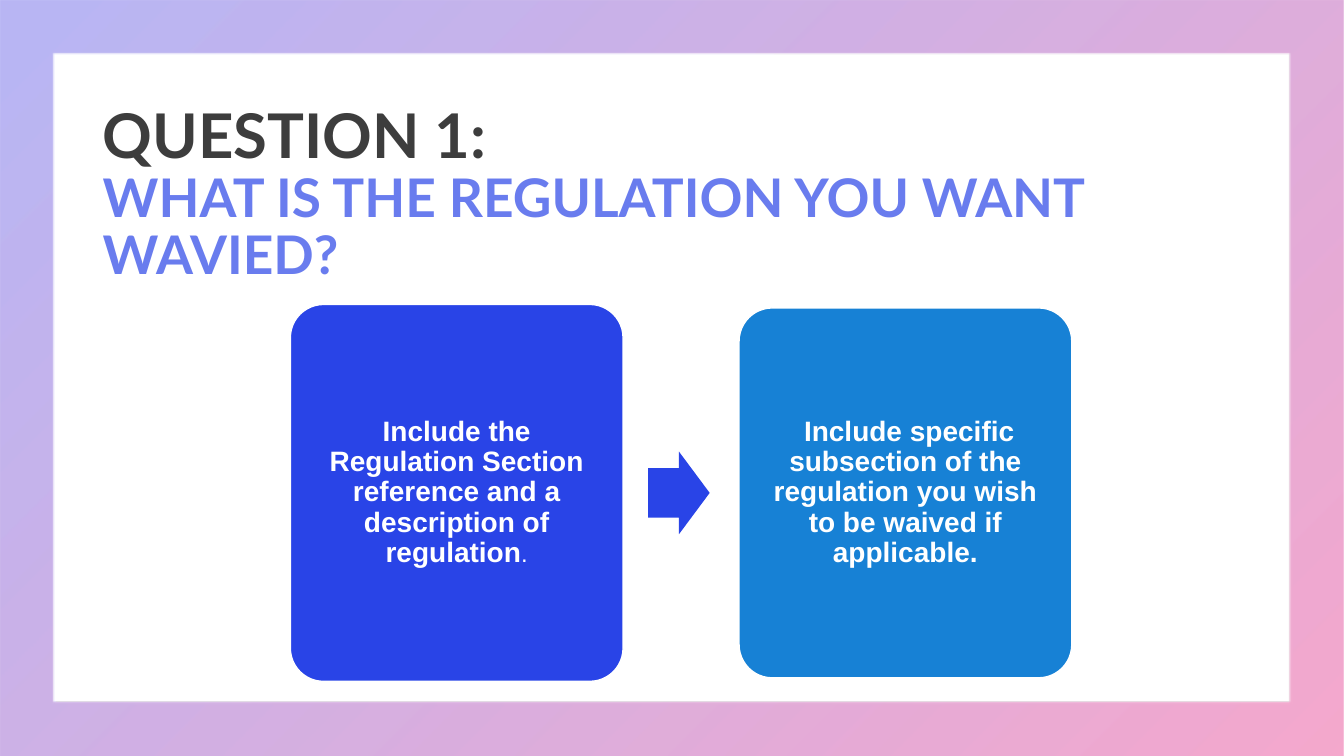
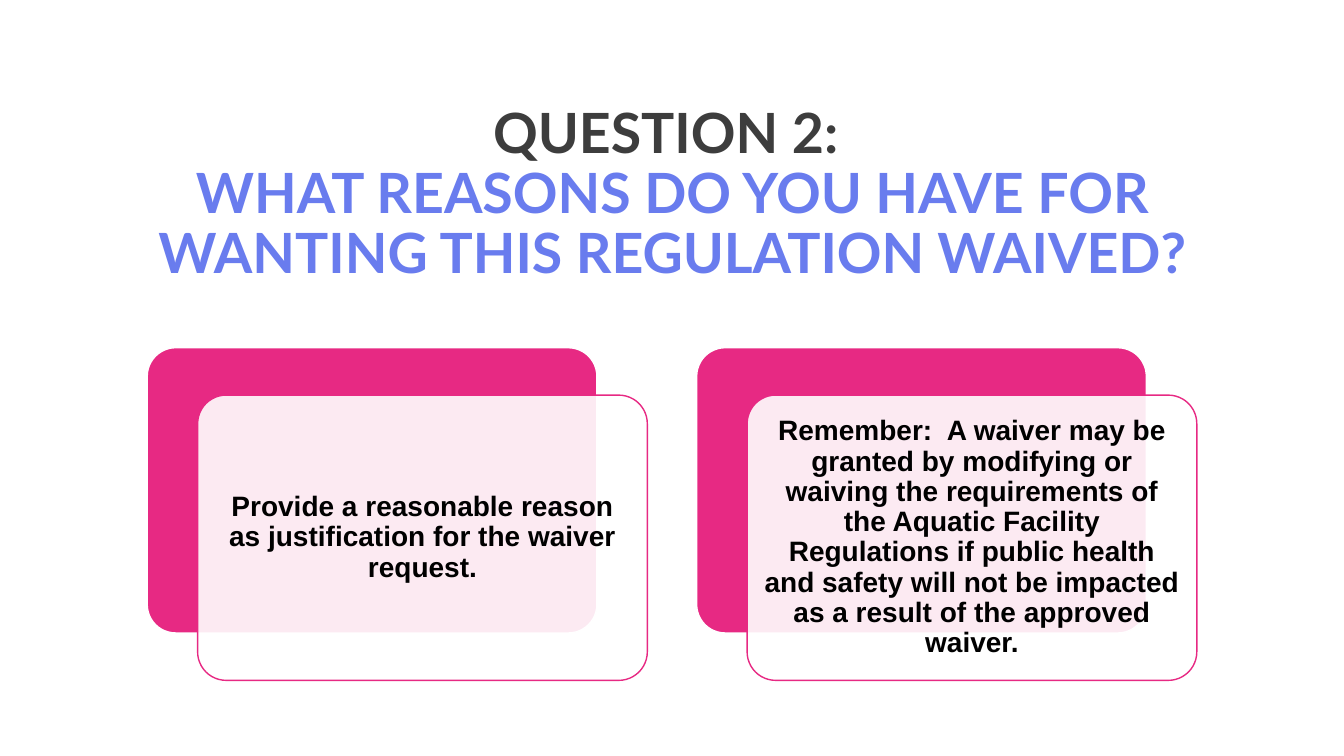
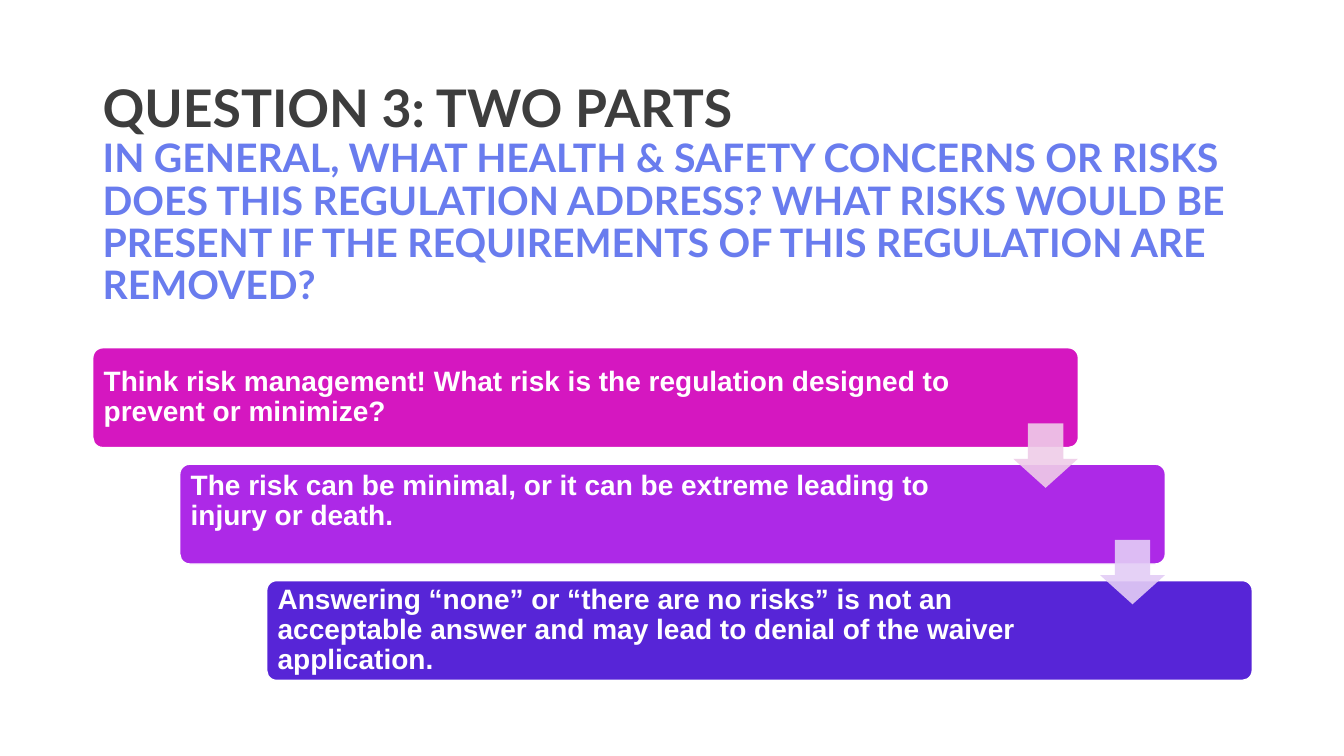
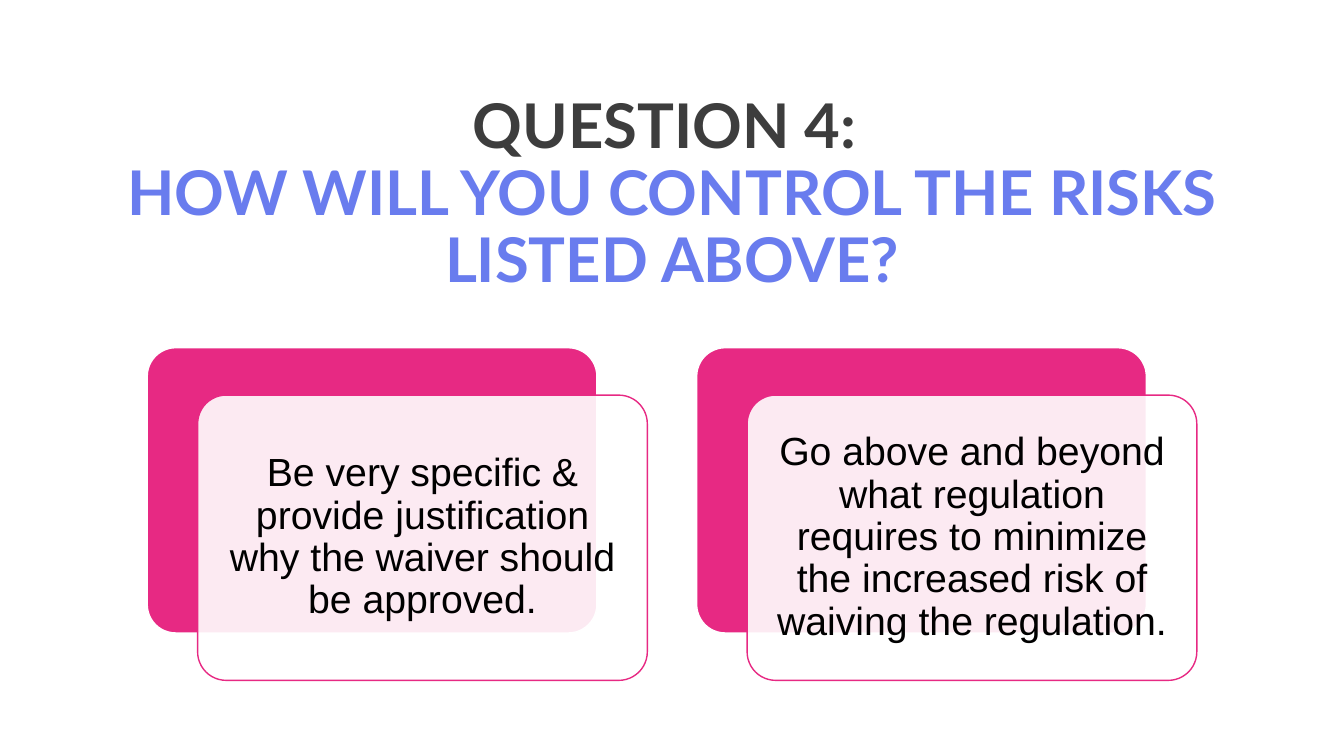
from lxml import etree
from pptx import Presentation
from pptx import util as u
from pptx.dml.color import RGBColor
from pptx.enum import shapes, text
from pptx.oxml.ns import qn

WHITE = RGBColor(0xFF, 0xFF, 0xFF)
BLACK = RGBColor(0x00, 0x00, 0x00)
CHARCOAL = RGBColor(0x3D, 0x3D, 0x3D)
PERIWINKLE = RGBColor(0x69, 0x7C, 0xEE)
INDIGO = RGBColor(0x50, 0x4C, 0xE5)
BLUE = RGBColor(0x29, 0x44, 0xE7)
SKY = RGBColor(0x17, 0x81, 0xD5)
PINK = RGBColor(0xE7, 0x29, 0x83)
MAGENTA = RGBColor(0xD5, 0x17, 0xC0)
PURPLE = RGBColor(0xAD, 0x29, 0xE7)
VIOLET = RGBColor(0x57, 0x25, 0xD7)
PALE_PINK = RGBColor(0xEF, 0xCC, 0xE8)
PALE_VIOLET = RGBColor(0xE3, 0xCD, 0xF6)

TITLE_FONT, BODY_FONT = "Lato", "Arial"
SLIDE_WIDTH, SLIDE_HEIGHT = u.Inches(13.33), u.Inches(7.5)
LEFT, BODY_WIDTH = u.Inches(0.92), u.Inches(11.5)
TITLE_TOP, TITLE_HEIGHT = u.Inches(0.67), u.Inches(2.54)
BODY_TOP, BODY_HEIGHT = u.Inches(3.45), u.Inches(3.3)
INSET = 0.08
MIDDLE, TOP = text.MSO_ANCHOR.MIDDLE, text.MSO_ANCHOR.TOP
CENTER, START = text.PP_ALIGN.CENTER, text.PP_ALIGN.LEFT
KIND = shapes.MSO_SHAPE


def body_area(x, y, width, height):
    return (int(LEFT + BODY_WIDTH * x / 100), int(BODY_TOP + BODY_HEIGHT * y / 100),
            int(BODY_WIDTH * width / 100), int(BODY_HEIGHT * height / 100))


def fade(shape, percent):
    for color in shape._element.spPr.iter(qn("a:srgbClr")):
        etree.SubElement(color, qn("a:alpha"), val=str(percent * 1000))


def add_shape(slide, kind, area, fill, line=None, adjustments=(0.1,), opacity=100):
    shape = slide.shapes.add_shape(kind, *area)
    shape.shadow.inherit = False
    for index, value in enumerate(adjustments):
        shape.adjustments[index] = value
    shape.fill.solid()
    shape.fill.fore_color.rgb = fill
    if opacity < 100:
        fade(shape, opacity)
    if line is None:
        shape.line.fill.background()
    else:
        shape.line.color.rgb = line
        shape.line.width = u.Pt(1)
    return shape


def write(shape, words, size=20, color=WHITE, bold=True, align=CENTER,
          anchor=MIDDLE, top=INSET, right=INSET, inset=INSET):
    frame = shape.text_frame
    frame.word_wrap = True
    frame.vertical_anchor = anchor
    frame.margin_left = frame.margin_bottom = u.Inches(inset)
    frame.margin_top, frame.margin_right = u.Inches(top), u.Inches(right)
    paragraph = frame.paragraphs[0]
    paragraph.alignment = align
    paragraph.line_spacing = 0.9
    paragraph.font.name = BODY_FONT
    paragraph.font.size = u.Pt(size)
    paragraph.font.bold = bold
    paragraph.font.color.rgb = color
    paragraph.add_run().text = words
    return paragraph


def add_title(slide, heading, question, heading_size, question_size, align=START):
    box = slide.shapes.add_textbox(LEFT, TITLE_TOP, BODY_WIDTH, TITLE_HEIGHT)
    frame = box.text_frame
    frame.word_wrap = True
    frame.vertical_anchor = MIDDLE
    paragraph = frame.paragraphs[0]
    paragraph.alignment = align
    paragraph.line_spacing = 0.9
    paragraph.font.name = TITLE_FONT
    paragraph.font.bold = True
    for words, size, color in ((heading, heading_size, CHARCOAL),
                               (question, question_size, PERIWINKLE)):
        run = paragraph.add_run()
        run.text = words
        run.font.size = u.Pt(size)
        run.font.color.rgb = color
        if words == heading:
            paragraph.add_line_break()


def add_gradient_frame(slide):
    frame = add_shape(slide, KIND.FRAME, (0, 0, SLIDE_WIDTH, SLIDE_HEIGHT), WHITE,
                      adjustments=(0.072,))
    frame.fill.gradient()
    frame.fill.gradient_angle = 315
    for stop, color, position in zip(frame.fill.gradient_stops, (INDIGO, PINK), (0.02, 1)):
        stop.color.rgb = color
        stop.position = position
    fade(frame, 40)


def add_process_box(slide, x, height, fill, words):
    area = body_area(x, 43.64 - height / 2, 28.7, height)
    return write(add_shape(slide, KIND.ROUNDED_RECTANGLE, area, fill, WHITE), words)


def add_cards(slide, messages, size, bold, inset):
    width, height, pitch, shift = 38.78, 85.76, 47.39, 4.35
    for index, words in enumerate(messages):
        x = 4.7 + index * pitch
        add_shape(slide, KIND.ROUNDED_RECTANGLE, body_area(x, 0, width, height), PINK, WHITE)
        card = add_shape(slide, KIND.ROUNDED_RECTANGLE,
                         body_area(x + shift, 100 - height, width, height),
                         WHITE, PINK, opacity=90)
        write(card, words, size, BLACK, bold, top=inset, right=inset, inset=inset)


def add_staircase(slide, steps, arrow_colors):
    step_x, step_y = 7.5, 35
    for index, (words, fill, right, anchor, top) in enumerate(steps):
        bar = add_shape(slide, KIND.ROUNDED_RECTANGLE,
                        body_area(index * step_x, index * step_y, 85, 30), fill, WHITE)
        write(bar, words, align=START, anchor=anchor, top=top, right=right)
    for index, color in enumerate(arrow_colors):
        area = body_area(79.39 + index * step_x, 22.73 + index * step_y, 5.57, 19.39)
        add_shape(slide, KIND.DOWN_ARROW, area, color, adjustments=(0.55, 0.45), opacity=90)


def main():
    presentation = Presentation()
    presentation.slide_width, presentation.slide_height = SLIDE_WIDTH, SLIDE_HEIGHT
    blank = presentation.slide_layouts[6]
    regulation, reasons, risks, controls = (
        presentation.slides.add_slide(blank) for _ in range(4))

    add_gradient_frame(regulation)
    add_title(regulation, "QUESTION 1: ", "WHAT IS THE REGULATION YOU WANT WAVIED?", 44, 38)
    paragraph = add_process_box(
        regulation, 17.04, 113.33, BLUE,
        "Include the Regulation Section reference and a description of regulation")
    period = paragraph.add_run()
    period.text = "."
    period.font.size = u.Pt(17)
    period.font.bold = False
    add_shape(regulation, KIND.RIGHT_ARROW, body_area(47.91, 31.21, 5.3, 24.85), BLUE,
              adjustments=(0.6, 0.5))
    add_process_box(
        regulation, 55.74, 111.21, SKY,
        " Include specific subsection of the regulation you wish to be waived if applicable.")

    add_title(reasons, "QUESTION 2: ",
              "WHAT REASONS DO YOU HAVE FOR WANTING THIS REGULATION WAIVED?", 39.6, 39.6, CENTER)
    add_cards(reasons, (
        "Provide a reasonable reason as justification for the waiver request.",
        "Remember:  A waiver may be granted by modifying or waiving the requirements of "
        "the Aquatic Facility Regulations if public health and safety will not be impacted "
        "as a result of the approved waiver.",
    ), 20, True, INSET)

    add_title(risks, "QUESTION 3: TWO PARTS ",
              "IN GENERAL, WHAT HEALTH & SAFETY CONCERNS OR RISKS DOES THIS REGULATION "
              "ADDRESS? WHAT RISKS WOULD BE PRESENT IF THE REQUIREMENTS OF THIS REGULATION "
              "ARE REMOVED?", 37, 28)
    add_staircase(risks, (
        ("Think risk management! What risk is the regulation designed to prevent or minimize?",
         MAGENTA, 1.1, MIDDLE, INSET),
        ("The risk can be minimal, or it can be extreme leading to injury or death.",
         PURPLE, 1.59, TOP, 0.04),
        ("Answering “none” or “there are no risks” is not an acceptable answer and may lead "
         "to denial of the waiver application.", VIOLET, 1.59, MIDDLE, INSET),
    ), (PALE_PINK, PALE_VIOLET))

    add_title(controls, "QUESTION 4: ", "HOW WILL YOU CONTROL THE RISKS LISTED ABOVE?",
              44, 44, CENTER)
    add_cards(controls, (
        "Be very specific & provide justification why the waiver should be approved.",
        "Go above and beyond what regulation requires to minimize the increased "
        "risk of waiving the regulation.",
    ), 28, False, 0.12)

    presentation.save("out.pptx")


if __name__ == "__main__":
    main()
